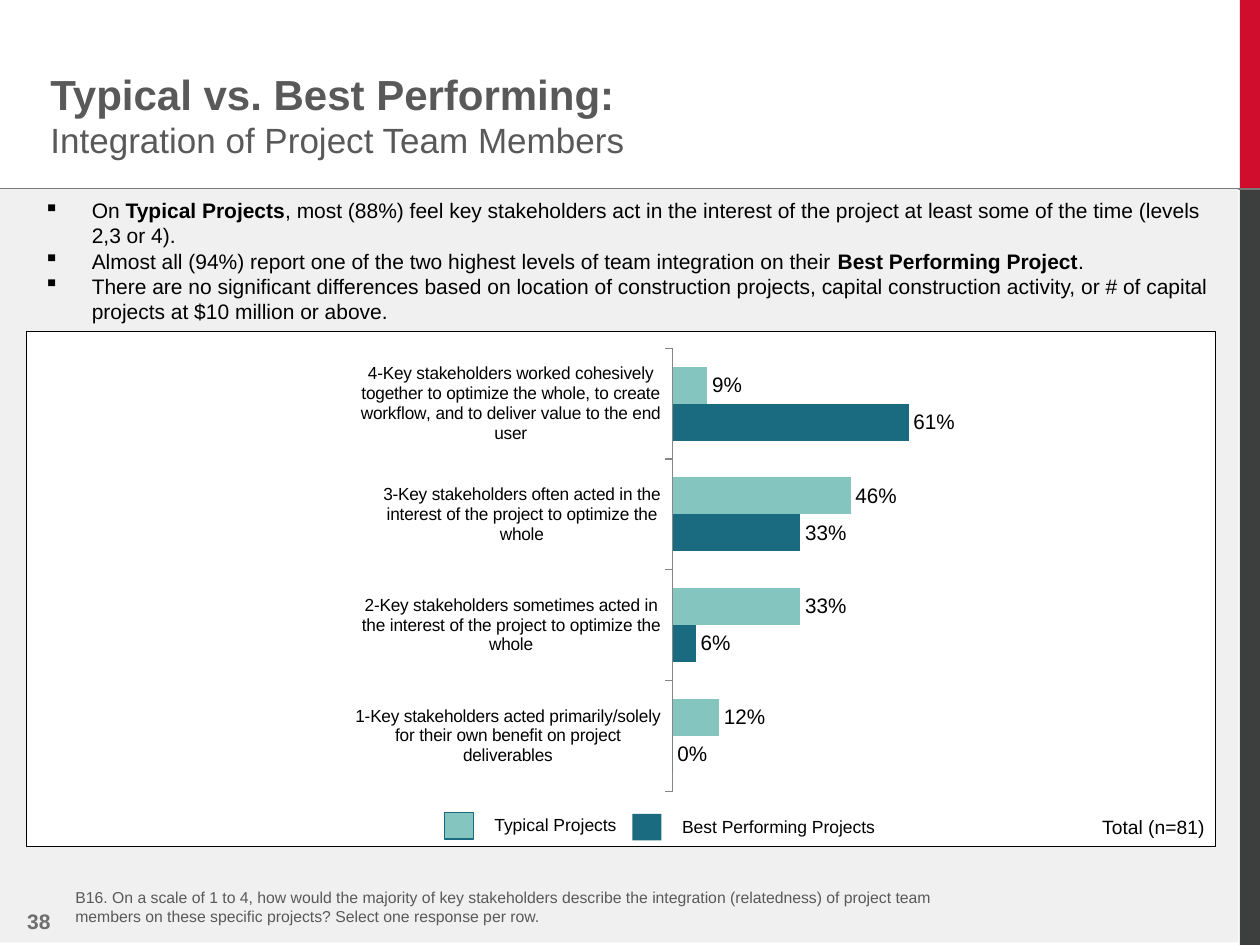
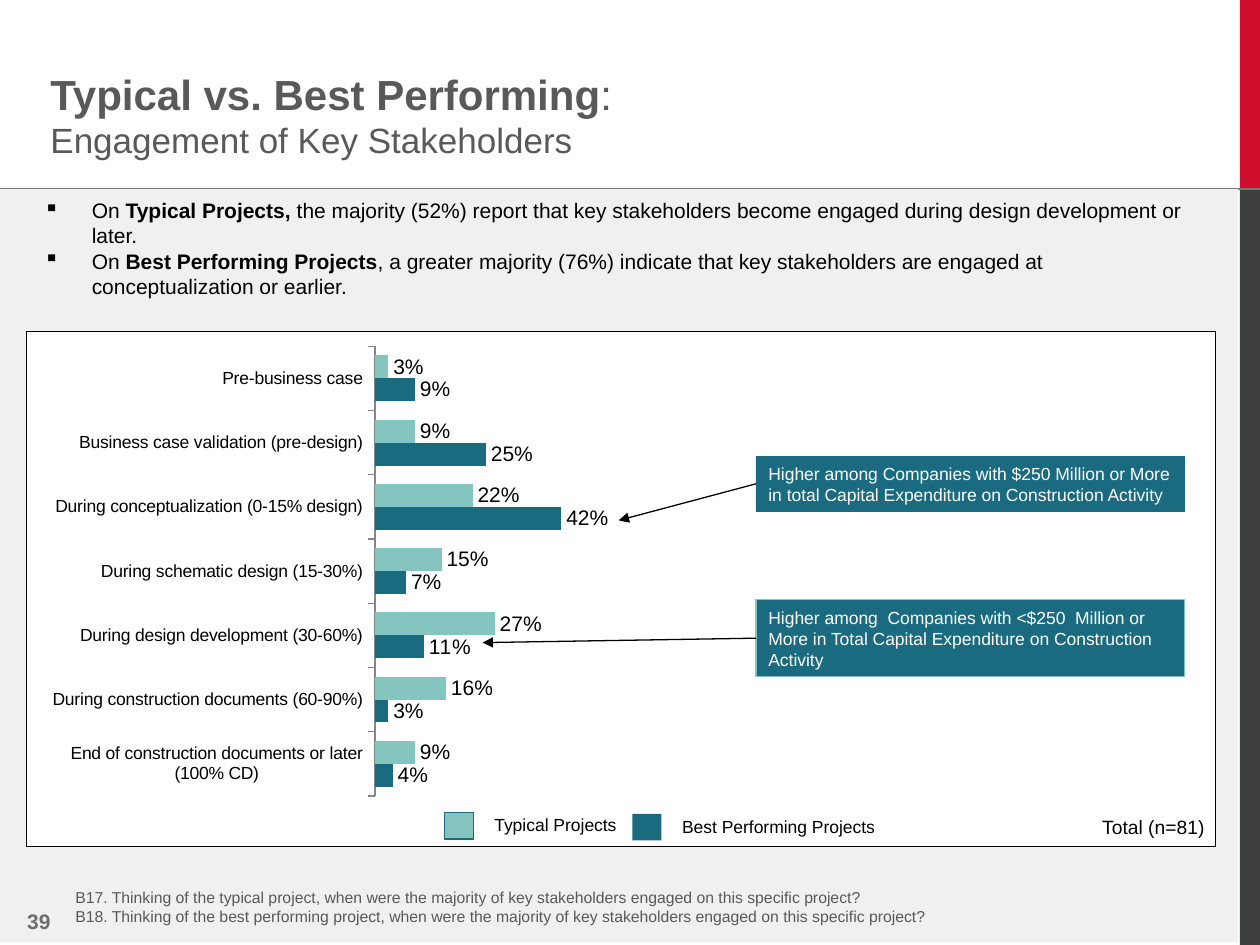
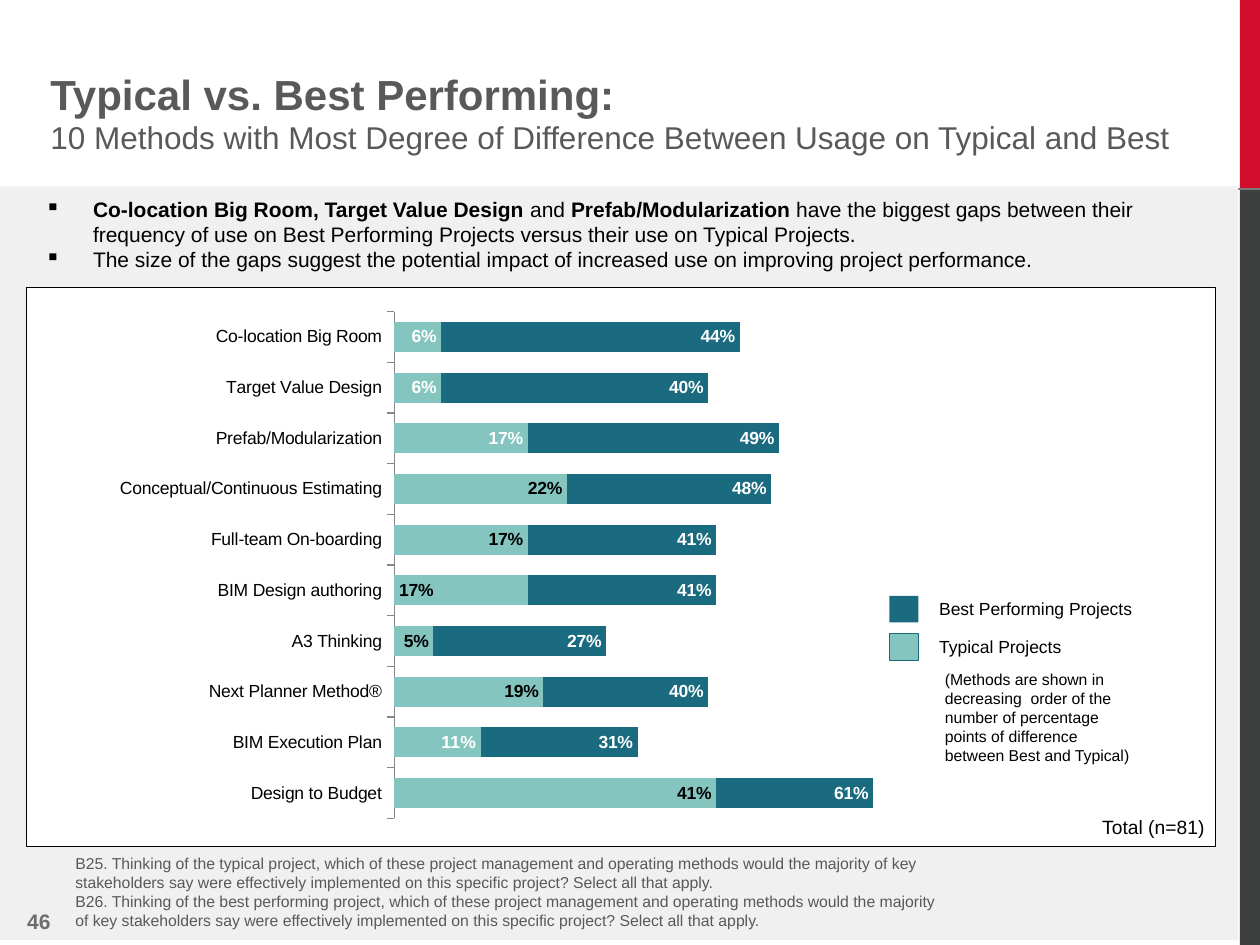
from dataclasses import dataclass

from lxml.etree import SubElement
from pptx import Presentation
from pptx.chart.data import CategoryChartData
from pptx.dml.color import RGBColor
from pptx.enum.chart import XL_CHART_TYPE, XL_LABEL_POSITION, XL_TICK_LABEL_POSITION, XL_TICK_MARK
from pptx.enum.shapes import MSO_CONNECTOR, MSO_SHAPE
from pptx.enum.text import MSO_ANCHOR, MSO_AUTO_SIZE, PP_ALIGN
from pptx.oxml import parse_xml
from pptx.oxml.ns import nsdecls, qn
from pptx.util import Inches, Pt

COLUMNS, ROWS = 100, 75
SLIDE_WIDTH, SLIDE_HEIGHT = Inches(10), Inches(7.5)
FONT = "Arial"
RED, CHARCOAL, RULE, BODY = "D00D2D", "3D3E3E", "7A7A7A", "F0F0F0"
BLACK, WHITE, GREY, PAGE_GREY, AXIS = "000000", "FFFFFF", "595959", "6D6D6D", "868686"
MINT, TEAL = "84C6BF", "1A6B7F"


@dataclass
class Box:
    left: float
    top: float
    width: float
    height: float

    def inner(self, left, top, width, height):
        return Box(self.left + left, self.top + top, width, height)

    def lengths(self):
        return (col(self.left), row(self.top), col(self.width), row(self.height))


def col(count):
    return round(SLIDE_WIDTH * count / COLUMNS)


def row(count):
    return round(SLIDE_HEIGHT * count / ROWS)


def color(hex_code):
    return RGBColor.from_string(hex_code)


def apply(target, values):
    for key, value in values.items():
        setattr(target, key, value)


def style_font(font, size, hex_code, bold=False):
    apply(font, {"name": FONT, "size": Pt(size), "bold": bold})
    font.color.rgb = color(hex_code)


def write(frame, paragraphs, sizes, hex_code, align=PP_ALIGN.LEFT, bullet=None, wrap=True):
    apply(frame, {"word_wrap": wrap, "auto_size": MSO_AUTO_SIZE.NONE})
    for index, marked in enumerate(paragraphs):
        paragraph = frame.paragraphs[0] if index == 0 else frame.add_paragraph()
        paragraph.alignment = align
        if bullet:
            properties = paragraph._p.get_or_add_pPr()
            properties.set("marL", str(Inches(0.38)))
            properties.set("indent", str(-Inches(0.38)))
            SubElement(properties, qn("a:buChar")).set("char", bullet)
        for order, words in enumerate(marked.split("**")):
            if words:
                run = paragraph.add_run()
                run.text = words
                style_font(run.font, sizes[min(index, len(sizes) - 1)], hex_code, order % 2 == 1)


def text(slide, box, paragraphs, size, hex_code=BLACK, **options):
    frame = slide.shapes.add_textbox(*box.lengths()).text_frame
    write(frame, paragraphs, [size], hex_code, **options)


def rectangle(slide, box, fill, outline=None, weight=0.75):
    shape = slide.shapes.add_shape(MSO_SHAPE.RECTANGLE, *box.lengths())
    shape.shadow.inherit = False
    shape.fill.solid()
    shape.fill.fore_color.rgb = color(fill)
    if outline:
        shape.line.color.rgb = color(outline)
        shape.line.width = Pt(weight)
    else:
        shape.line.fill.background()
    return shape


def straight(slide, start, end, hex_code, weight):
    line = slide.shapes.add_connector(
        MSO_CONNECTOR.STRAIGHT, col(start[0]), row(start[1]), col(end[0]), row(end[1]))
    line.line.color.rgb = color(hex_code)
    line.line.width = Pt(weight)
    SubElement(line._element.spPr, qn("a:effectLst"))
    return line


def backdrop(slide, body):
    rectangle(slide, Box(98.4, 0, 1.6, 15), RED)
    rectangle(slide, Box(98.4, 15, 1.6, 60), CHARCOAL)
    straight(slide, (COLUMNS, 15), (0, 15), RULE, 1)
    rectangle(slide, body, BODY)


def heading(slide, box, lines, subtitle_size):
    title = slide.shapes.title
    apply(title, dict(zip(("left", "top", "width", "height"), box.lengths())))
    title.text_frame.vertical_anchor = MSO_ANCHOR.TOP
    write(title.text_frame, lines, [24, subtitle_size], GREY)


def footer(slide, box, questions, page):
    text(slide, box, questions, 9, GREY)
    text(slide, Box(0, 71.6, 5, 2.2), [f"**{page}**"], 12, PAGE_GREY, align=PP_ALIGN.RIGHT)


def panel(slide, box):
    rectangle(slide, box, WHITE, BLACK)
    text(slide, box.inner(box.width - 14.7, box.height - 3, 14.8, 2.9),
         ["Total (n=81)"], 11, align=PP_ALIGN.RIGHT)


def legend(slide, typical, best):
    entries = ((typical, "Typical Projects", MINT, TEAL), (best, "Best Performing Projects", TEAL, None))
    for box, name, fill, outline in entries:
        rectangle(slide, box, fill, outline)
        text(slide, box.inner(2.95, -0.35, 17.5, 2.7), [name], 10, wrap=False)


def place_plot(chart, shares):
    old = chart._chartSpace.chart.plotArea.find(qn("c:layout"))
    if old is not None:
        old.getparent().remove(old)
    values = "".join(f'<c:{key} val="{share}"/>' for key, share in zip("xywh", shares))
    chart._chartSpace.chart.plotArea.insert(0, parse_xml(
        f'<c:layout {nsdecls("c")}><c:manualLayout><c:layoutTarget val="inner"/>'
        f'<c:xMode val="edge"/><c:yMode val="edge"/>{values}</c:manualLayout></c:layout>'))


def bar_chart(slide, box, plot_shares, rows, series, gap, maximum, reverse=True,
              overlap=0, label_size=12, label_bold=False,
              label_position=XL_LABEL_POSITION.OUTSIDE_END):
    data = CategoryChartData(number_format="0%")
    data.categories = [entry[0] for entry in rows]
    for name, column, fill, label_color in series:
        data.add_series(name, [entry[column] / 100 for entry in rows])
    chart = slide.shapes.add_chart(XL_CHART_TYPE.BAR_CLUSTERED, *box.lengths(), data).chart
    apply(chart, {"has_legend": False, "has_title": False})
    style_font(chart.font, 10, BLACK)
    place_plot(chart, plot_shares)
    apply(chart.value_axis, {"visible": False, "has_major_gridlines": False,
                             "minimum_scale": 0, "maximum_scale": maximum})
    axis = chart.category_axis
    apply(axis, {"reverse_order": reverse, "major_tick_mark": XL_TICK_MARK.OUTSIDE,
                 "minor_tick_mark": XL_TICK_MARK.NONE, "has_major_gridlines": False,
                 "tick_label_position": XL_TICK_LABEL_POSITION.LOW})
    axis.format.line.color.rgb = color(AXIS)
    style_font(axis.tick_labels.font, 10, BLACK)
    plot = chart.plots[0]
    apply(plot, {"gap_width": gap, "overlap": overlap, "vary_by_categories": False})
    for bars, (name, column, fill, label_color) in zip(plot.series, series):
        bars.format.fill.solid()
        bars.format.fill.fore_color.rgb = color(fill)
        apply(bars.data_labels, {"show_value": True, "number_format": "0%",
                                 "number_format_is_linked": False, "position": label_position})
        style_font(bars.data_labels.font, label_size, label_color, label_bold)
    return plot


def callout(slide, box, words, outline, weight, target):
    note = rectangle(slide, box, TEAL, outline, weight)
    write(note.text_frame, [words], [10], WHITE)
    arrow = straight(slide, (box.left, box.top + box.height / 2), target, BLACK, 0.75)
    arrow.begin_connect(note, 1)
    SubElement(arrow.line._get_or_add_ln(), qn("a:tailEnd")).set("type", "triangle")


def start_slide(deck, body, lines, subtitle_size, bullets_box, bullets, panel_box):
    slide = deck.slides.add_slide(deck.slide_layouts[5])
    backdrop(slide, body)
    heading(slide, Box(3, 4.9, 94.6, 8.4), lines, subtitle_size)
    panel(slide, panel_box)
    text(slide, bullets_box, bullets, 12, bullet="▪")
    return slide


BODY_BOX = Box(0, 15, 98.3, 59.8)
PANEL_BOX = Box(2.1, 26.3, 94.4, 40.9)
FOOTER_BOX = Box(5, 70, 70.6, 4)
TYPICAL_KEY, BEST_KEY = Box(35.3, 64.5, 2.3, 2.1), Box(50.2, 64.6, 2.3, 2.1)
PAIRED_SERIES = (("Series 1", 1, MINT, BLACK), ("Series 2", 2, TEAL, BLACK))


def integration_slide(deck):
    slide = start_slide(
        deck, BODY_BOX,
        ["**Typical vs. Best Performing:**", "Integration of Project Team Members"], 20,
        Box(2.5, 15.2, 94.8, 13.1),
        ["On **Typical Projects**, most (88%) feel key stakeholders act in the interest of the project "
         "at least some of the time (levels 2,3 or 4).",
         "Almost all (94%) report one of the two highest levels of team integration on their "
         "**Best Performing Project**.",
         "There are no significant differences based on location of construction projects, capital "
         "construction activity, or # of capital projects at $10 million or above."],
        PANEL_BOX)
    levels = (
        ("4-Key stakeholders worked cohesively together to optimize the whole, to create workflow, "
         "and to deliver value to the end user", 9, 61),
        ("3-Key stakeholders often acted in the interest of the project to optimize the whole", 46, 33),
        ("2-Key stakeholders sometimes acted in the interest of the project to optimize the whole", 33, 6),
        ("1-Key stakeholders acted primarily/solely for their own benefit on project deliverables", 12, 0),
    )
    bar_chart(slide, Box(28.2, 25.6, 48.6, 40.9), (0.51, 0.05, 0.45, 0.86),
              levels, PAIRED_SERIES, 100, 0.7)
    legend(slide, TYPICAL_KEY, BEST_KEY)
    footer(slide, FOOTER_BOX,
           ["B16. On a scale of 1 to 4, how would the majority of key stakeholders describe the "
            "integration (relatedness) of project team members on these specific projects? "
            "Select one response per row."], 38)


def engagement_slide(deck):
    slide = start_slide(
        deck, BODY_BOX,
        ["**Typical vs. Best Performing**:", "Engagement of Key Stakeholders"], 20,
        Box(2.5, 15.2, 93.1, 9.1),
        ["On **Typical Projects,** the majority (52%) report that key stakeholders become engaged "
         "during design development or later.",
         "On **Best Performing Projects**, a greater majority (76%) indicate that key stakeholders "
         "are engaged at conceptualization or earlier."],
        PANEL_BOX)
    phases = (
        ("Pre-business case", 3, 9),
        ("Business case validation (pre-design)", 9, 25),
        ("During conceptualization (0-15% design)", 22, 42),
        ("During schematic design (15-30%)", 15, 7),
        ("During design development (30-60%)", 27, 11),
        ("During construction documents (60-90%)", 16, 3),
        ("End of construction documents or later (100% CD)", 9, 4),
    )
    bar_chart(slide, Box(3.9, 25.8, 52.8, 42), (0.49, 0.04, 0.3, 0.85),
              phases, PAIRED_SERIES, 80, 0.45)
    callout(slide, Box(60, 36.2, 34, 4.4),
            "Higher among Companies with $250 Million or More in total Capital Expenditure on "
            "Construction Activity", TEAL, 0.25, (49.1, 41.3))
    callout(slide, Box(60, 47.6, 34, 6.1),
            "Higher among  Companies with <$250  Million or More in Total Capital Expenditure on "
            "Construction Activity", MINT, 0.75, (38.3, 51))
    legend(slide, TYPICAL_KEY, BEST_KEY)
    footer(slide, FOOTER_BOX,
           [f"{code}. Thinking of the {kind} project, when were the majority of key stakeholders "
            "engaged on this specific project?"
            for code, kind in (("B17", "typical"), ("B18", "best performing"))], 39)


def methods_slide(deck):
    slide = start_slide(
        deck, Box(0, 14.8, 98.3, 59.8),
        ["**Typical vs. Best Performing:**",
         "10 Methods with Most Degree of Difference Between Usage on Typical and Best"], 18,
        Box(2.6, 15.1, 93.1, 7.1),
        ["**Co-location Big Room, Target Value Design **and **Prefab/Modularization **have the biggest "
         "gaps between their frequency of use on Best Performing Projects versus their use on "
         "Typical Projects.",
         "The size of the gaps suggest the potential impact of increased use on improving project "
         "performance."],
        Box(2.1, 22.8, 94.4, 44.4))
    methods = (
        ("Design to Budget", 61, 41),
        ("BIM Execution Plan", 31, 11),
        ("Next Planner Method®", 40, 19),
        ("A3 Thinking", 27, 5),
        ("BIM Design authoring", 41, 17),
        ("Full-team On-boarding", 41, 17),
        ("Conceptual/Continuous Estimating", 48, 22),
        ("Prefab/Modularization", 49, 17),
        ("Target Value Design", 40, 6),
        ("Co-location Big Room", 44, 6),
    )
    plot = bar_chart(slide, Box(8.1, 23.9, 68.2, 41.9), (0.34, 0.02, 0.64, 0.96), methods,
                     (("Series 1", 1, TEAL, WHITE), ("Series 2", 2, MINT, BLACK)),
                     70, 0.7, reverse=False, overlap=100, label_size=10, label_bold=True,
                     label_position=XL_LABEL_POSITION.INSIDE_END)
    at_end, at_base = XL_LABEL_POSITION.INSIDE_END, XL_LABEL_POSITION.INSIDE_BASE
    special_labels = {1: (WHITE, at_end), 4: (BLACK, at_base), 7: (WHITE, at_end),
                      8: (WHITE, at_end), 9: (WHITE, at_end)}
    for index, (label_color, position) in special_labels.items():
        label = plot.series[1].points[index].data_label
        style_font(label.font, 10, label_color, True)
        label.position = position
    legend(slide, Box(70.6, 50.3, 2.3, 2.1), Box(70.6, 47.3, 2.3, 2.1))
    text(slide, Box(74, 52.7, 16.9, 8.6),
         ["(Methods are shown in decreasing  order of the number of percentage points of difference "
          "between Best and Typical)"], 9)
    footer(slide, Box(5, 67.3, 70.6, 7.1),
           [f"{code}. Thinking of the {kind} project, which of these project management and operating "
            "methods would the majority of key stakeholders say were effectively implemented on this "
            "specific project? Select all that apply."
            for code, kind in (("B25", "typical"), ("B26", "best performing"))], 46)


def main():
    deck = Presentation()
    apply(deck, {"slide_width": SLIDE_WIDTH, "slide_height": SLIDE_HEIGHT})
    for build in (integration_slide, engagement_slide, methods_slide):
        build(deck)
    deck.save("out.pptx")


if __name__ == "__main__":
    main()
